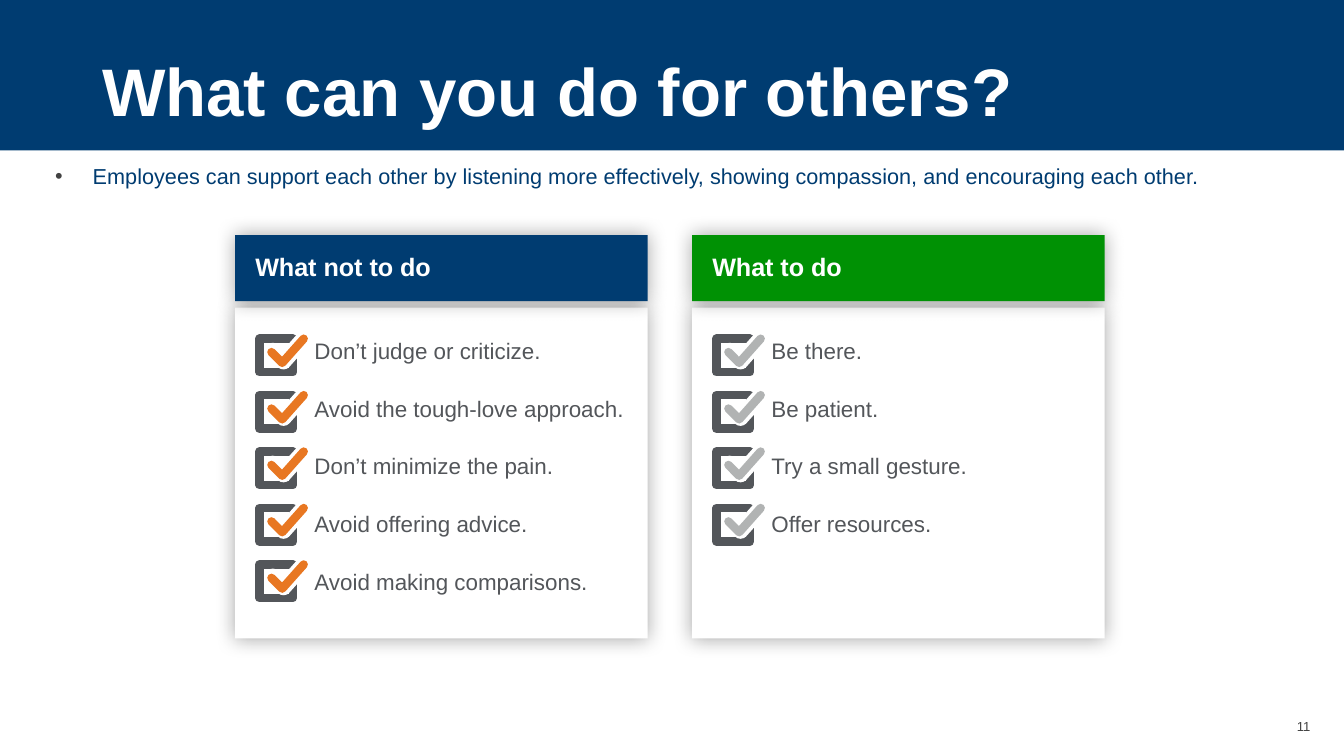
from lxml import etree
from pptx import Presentation
from pptx.dml.color import RGBColor
from pptx.enum.shapes import MSO_SHAPE
from pptx.enum.text import MSO_ANCHOR, MSO_AUTO_SIZE, PP_ALIGN
from pptx.oxml.ns import qn
from pptx.util import Inches, Pt

RECTANGLE = MSO_SHAPE.RECTANGLE
MIDDLE, TOP, BOTTOM = MSO_ANCHOR.MIDDLE, MSO_ANCHOR.TOP, MSO_ANCHOR.BOTTOM
NO_AUTOFIT = MSO_AUTO_SIZE.NONE
LEFT, RIGHT = PP_ALIGN.LEFT, PP_ALIGN.RIGHT

NAVY = RGBColor(0x00, 0x3C, 0x71)
GREEN = RGBColor(0x00, 0x91, 0x04)
ORANGE = RGBColor(0xE8, 0x77, 0x22)
SILVER = RGBColor(0xB1, 0xB3, 0xB3)
GRAY = RGBColor(0x53, 0x56, 0x5A)
DARK = RGBColor(0x42, 0x42, 0x42)
WHITE = RGBColor(0xFF, 0xFF, 0xFF)

FONT = "Arial"
CARD_TOP = 1.75
CHECK_TOP = 2.52
CHECK_PITCH = 0.42
COLUMNS = [
    (1.75, NAVY, ORANGE, "What not to do",
     ["Don’t judge or criticize.", "Avoid the tough-love approach.",
      "Don’t minimize the pain.", "Avoid offering advice.",
      "Avoid making comparisons."]),
    (5.15, GREEN, SILVER, "What to do",
     ["Be there.", "Be patient.", "Try a small gesture.", "Offer resources."]),
]


def set_up_frame(shape, anchor, insets):
    frame = shape.text_frame
    frame.word_wrap = True
    frame.auto_size = NO_AUTOFIT
    frame.vertical_anchor = anchor
    frame.margin_left, frame.margin_top, frame.margin_right, frame.margin_bottom = [
        Inches(inset) for inset in insets]
    return frame


def add_text(paragraph, text, size, color, bold=False, align=LEFT):
    paragraph.alignment = align
    run = paragraph.add_run()
    run.text = text
    run.font.name = FONT
    run.font.size = Pt(size)
    run.font.bold = bold
    run.font.color.rgb = color


presentation = Presentation()
presentation.slide_width = Inches(10)
presentation.slide_height = Inches(10) * 9 // 16
slide = presentation.slides.add_slide(presentation.slide_layouts[1])

banner = slide.shapes.add_shape(RECTANGLE, 0, 0, Inches(10), Inches(1.12))
banner.shadow.inherit = False
banner.fill.solid()
banner.fill.fore_color.rgb = NAVY
banner.line.fill.background()
slide.shapes._spTree.insert(2, banner._element)

title = slide.shapes.title
title.left, title.top = Inches(0.76), Inches(0.41)
title.width, title.height = Inches(8.74), Inches(0.52)
frame = set_up_frame(title, MIDDLE, (0, 0.05, 0, 0.05))
add_text(frame.paragraphs[0], "What can you do for others?", 36, WHITE, True)

body = slide.placeholders[1]
body.left, body.top = Inches(0.41), Inches(0.92)
body.width, body.height = Inches(9.28), Inches(0.52)
paragraph = set_up_frame(body, MIDDLE, (0, 0.2, 0, 0)).paragraphs[0]
paragraph.line_spacing = 1.3
paragraph.space_before = Pt(0)
properties = paragraph._p.get_or_add_pPr()
properties.set("marL", str(Inches(0.28)))
properties.set("indent", str(Inches(-0.28)))
bullet_color = etree.SubElement(properties, qn("a:buClr"))
etree.SubElement(bullet_color, qn("a:srgbClr"), val=str(DARK))
etree.SubElement(properties, qn("a:buFont"), typeface=FONT)
etree.SubElement(properties, qn("a:buChar"), char="•")
add_text(paragraph, "Employees can support each other by listening more effectively, "
         "showing compassion, and encouraging each other.", 11.6, NAVY)

for left, header_color, check_color, heading, items in COLUMNS:
    shapes = slide.shapes.add_group_shape().shapes

    for top, height, color in [(2.29, 2.46, WHITE), (CARD_TOP, 0.49, header_color)]:
        card = shapes.add_shape(RECTANGLE, Inches(left), Inches(top), Inches(3.07), Inches(height))
        card.fill.solid()
        card.fill.fore_color.rgb = color
        card.line.fill.background()
        card.shadow.inherit = False
        effects = card._element.spPr.find(qn("a:effectLst"))
        shadow = etree.SubElement(effects, qn("a:outerShdw"), blurRad=str(Pt(10.8)),
                                  dist="0", dir="2700000", algn="ctr", rotWithShape="0")
        shadow_color = etree.SubElement(shadow, qn("a:srgbClr"), val="000000")
        etree.SubElement(shadow_color, qn("a:alpha"), val="35000")

    paragraph = set_up_frame(card, MIDDLE, (0.15, 0.07, 0.15, 0.07)).paragraphs[0]
    paragraph.line_spacing = 0.95
    paragraph.space_after = Pt(3)
    add_text(paragraph, heading, 13.5, WHITE, True)

    item_box = shapes.add_textbox(Inches(left + 0.02), Inches(2.53), Inches(3.17), Inches(2.04))
    frame = set_up_frame(item_box, TOP, (0.12, 0, 0.12, 0))
    for index, item in enumerate(items):
        paragraph = frame.add_paragraph() if index else frame.paragraphs[0]
        paragraph.line_spacing = 0.9
        paragraph.space_before = Pt(13.5 if index else 0)
        paragraph.space_after = Pt(4.5)
        paragraph._p.get_or_add_pPr().set("marL", str(Inches(0.45)))
        add_text(paragraph, item, 12, GRAY)

    for index in range(len(items)):
        x = left + 0.18
        y = CHECK_TOP + index * CHECK_PITCH
        square = shapes.add_shape(RECTANGLE, Inches(x), Inches(y), Inches(0.25), Inches(0.25))
        strokes = [(square, GRAY, 4.5)]
        for dx, dy, color, width in [(0.1, -0.01, WHITE, 8.5), (0.09, 0, check_color, 4.5)]:
            start_x, start_y = x + dx, y + dy
            builder = shapes.build_freeform(Inches(start_x), Inches(start_y + 0.1))
            builder.add_line_segments(
                [(Inches(start_x + 0.08), Inches(start_y + 0.18)),
                 (Inches(start_x + 0.24), Inches(start_y))], close=False)
            strokes.append((builder.convert_to_shape(), color, width))
        for stroke, color, width in strokes:
            stroke.shadow.inherit = False
            stroke.fill.background()
            stroke.line.color.rgb = color
            stroke.line.width = Pt(width)
            outline = stroke._element.spPr.find(qn("a:ln"))
            outline.set("cap", "flat" if stroke is square else "rnd")
            etree.SubElement(outline, qn("a:round"))

page_number = slide.shapes.add_textbox(Inches(9.47), Inches(5.35), Inches(0.28), Inches(0.11))
frame = set_up_frame(page_number, BOTTOM, (0, 0, 0, 0))
add_text(frame.paragraphs[0], "11", 7, DARK, align=RIGHT)

presentation.save("out.pptx")
